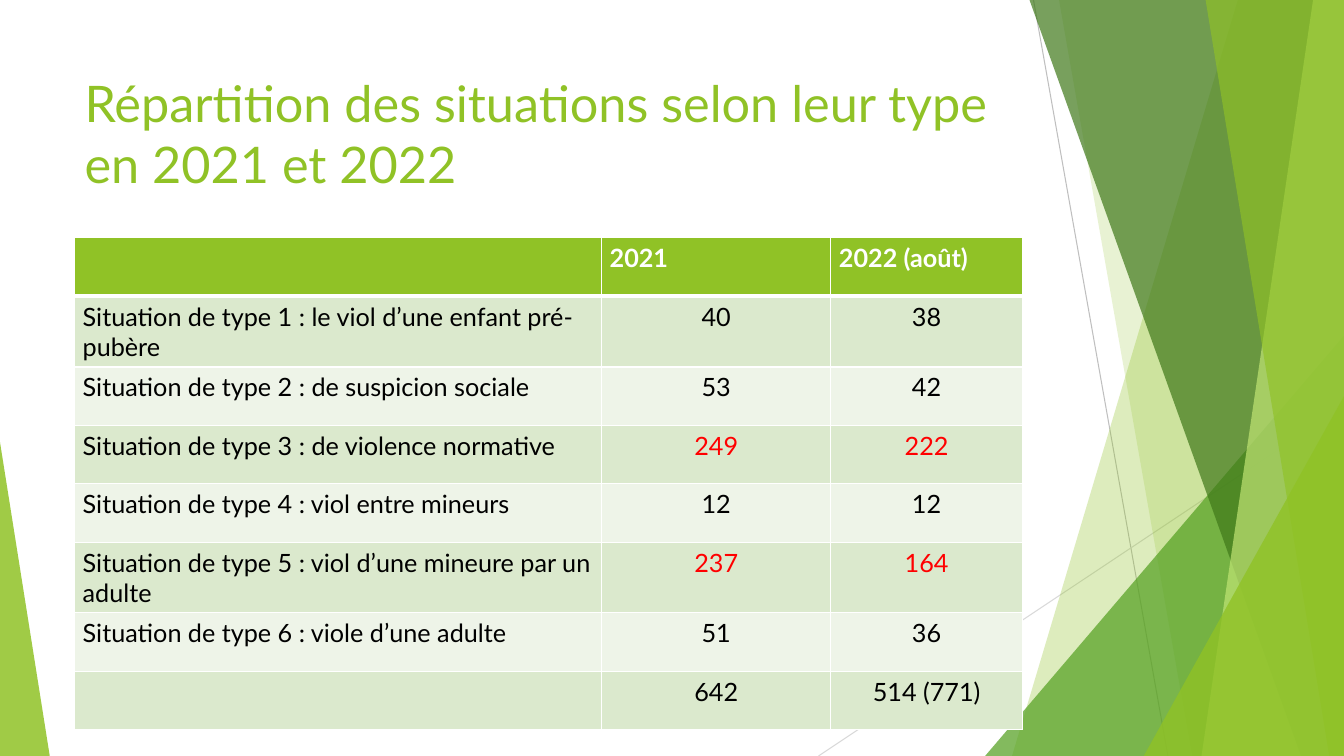
from lxml import etree
from pptx import Presentation, util as u
from pptx.dml.color import RGBColor
from pptx.enum import shapes, text
from pptx.oxml import ns

FONT = "Lato"
GREEN, RED, BLACK, WHITE = "90C226", "FF0000", "000000", "FFFFFF"
BANDS = ("DBE9CD", "EEF4E8")

# Decoration, in percent of the page: lines run from x, y to x, y
LINES = [((76.9, 0), (86.9, 100), "BFBFBF"),
         ((100, 53.7), (60.9, 100), "D9D9D9")]
# A band reaches the right edge: x at its top, x at its foot.
# A peak stands on the bottom edge: left, top, right, place of its tip.
FACETS = [("band", (92.1, 75.3), GREEN, 30),
          ("band", (78.8, 88.7), GREEN, 20),
          ("peak", (73.3, 44.4, 100, 1), "54A021", 72),
          ("band", (76.6, 96.8), "3F7819", 70),
          ("band", (97.7, 89.4), "C0E474", 70),
          ("band", (89.7, 98.9), GREEN, 65),
          ("peak", (85.1, 52.4, 100, 1), GREEN, 80),
          ("peak", (0, 58.5, 3.7, 0), GREEN, 85)]

TITLE = "Répartition des situations selon leur type en 2021 et 2022"
COLUMN_SHARES = (0.556, 0.242, 0.202)
ROWS = [("", "2021", "2022 (août)"),
        ("Situation de type 1 : le viol d’une enfant pré-pubère", "40", "38"),
        ("Situation de type 2 : de suspicion sociale", "53", "42"),
        ("Situation de type 3 : de violence normative", "249", "222"),
        ("Situation de type 4 : viol entre mineurs", "12", "12"),
        ("Situation de type 5 : viol d’une mineure par un adulte", "237", "164"),
        ("Situation de type 6 : viole d’une adulte", "51", "36"),
        ("", "642", "514 (771)")]
RED_ROWS = (3, 5)


def colour(value):
    return RGBColor.from_string(value)


def set_all(target, **values):
    for name, value in values.items():
        setattr(target, name, value)


def write(para, words, size, ink, bold=False):
    span = para.add_run()
    span.text = words
    set_all(span.font, name=FONT, size=u.Pt(size), bold=bold)
    span.font.color.rgb = colour(ink)


def paint(shape, fill, opacity):
    shape.shadow.inherit = False
    shape.fill.solid()
    shape.fill.fore_color.rgb = colour(fill)
    shape.line.fill.background()
    tint = shape.fill._xPr.find(".//" + ns.qn("a:srgbClr"))
    etree.SubElement(tint, ns.qn("a:alpha"), val=str(opacity * 1000))


def add_decoration(page, box):
    left, top, width, height = box

    def spot(x, y):
        return round(left + width * x / 100), round(top + height * y / 100)

    for start, end, ink in LINES:
        line = page.shapes.add_connector(
            shapes.MSO_CONNECTOR.STRAIGHT, *spot(*start), *spot(*end))
        line.line.color.rgb = colour(ink)
        line.line.width = u.Pt(0.75)
        etree.SubElement(line._element.spPr, ns.qn("a:effectLst"))

    for kind, place, fill, opacity in FACETS:
        if kind == "band":
            head, foot = place
            outline = page.shapes.build_freeform(*spot(head, 0))
            outline.add_line_segments(
                [spot(100, 0), spot(100, 100), spot(foot, 100)])
            facet = outline.convert_to_shape()
        else:
            start, peak, end, tip = place
            x, y = spot(start, peak)
            right, bottom = spot(end, 100)
            facet = page.shapes.add_shape(
                shapes.MSO_SHAPE.ISOSCELES_TRIANGLE, x, y, right - x, bottom - y)
            facet.adjustments[0] = tip
        paint(facet, fill, opacity)


def add_title(page, box):
    frame = page.shapes.add_textbox(*box).text_frame
    set_all(frame, word_wrap=True, vertical_anchor=text.MSO_ANCHOR.TOP)
    write(frame.paragraphs[0], TITLE, 36, GREEN)


def add_borders(cell, top, bottom):
    """Draw white cell edges, with top and bottom widths in points."""
    props = cell._tc.get_or_add_tcPr()
    for edge, width in (("L", 1), ("R", 1), ("T", top), ("B", bottom)):
        line = etree.SubElement(props, ns.qn("a:ln" + edge), w=str(u.Pt(width)))
        fill = etree.SubElement(line, ns.qn("a:solidFill"))
        etree.SubElement(fill, ns.qn("a:srgbClr"), val=WHITE)


def add_situations(page, box):
    left, top, width, height = box
    table = page.shapes.add_table(len(ROWS), len(COLUMN_SHARES), *box).table
    for column, share in zip(table.columns, COLUMN_SHARES):
        column.width = round(width * share)

    for r, row in enumerate(ROWS):
        header = r == 0
        for c, words in enumerate(row):
            cell = table.cell(r, c)
            add_borders(cell, 3 if r == 1 else 1, 3 if header else 1)
            cell.fill.solid()
            cell.fill.fore_color.rgb = colour(
                GREEN if header else BANDS[(r - 1) % 2])
            set_all(cell, margin_left=u.Inches(0.08), margin_right=u.Inches(0.08),
                    margin_top=u.Inches(0.05), margin_bottom=u.Inches(0.05))
            para = cell.text_frame.paragraphs[0]
            number = c > 0 and not header
            para.alignment = text.PP_ALIGN.CENTER if number else text.PP_ALIGN.LEFT
            ink = WHITE if header else RED if number and r in RED_ROWS else BLACK
            if words:
                write(para, words, 18, ink, header)


def main():
    deck = Presentation()
    set_all(deck, slide_width=u.Inches(13.33), slide_height=u.Inches(7.5))
    page = deck.slides.add_slide(deck.slide_layouts[6])
    left, width = u.Inches(0.74), u.Inches(9.4)
    add_decoration(page, (0, 0, deck.slide_width, deck.slide_height))
    add_title(page, (left, u.Inches(0.67), width, u.Inches(1.44)))
    add_situations(page, (left, u.Inches(2.36), width, u.Inches(0.58 * len(ROWS))))
    deck.save("out.pptx")


if __name__ == "__main__":
    main()
